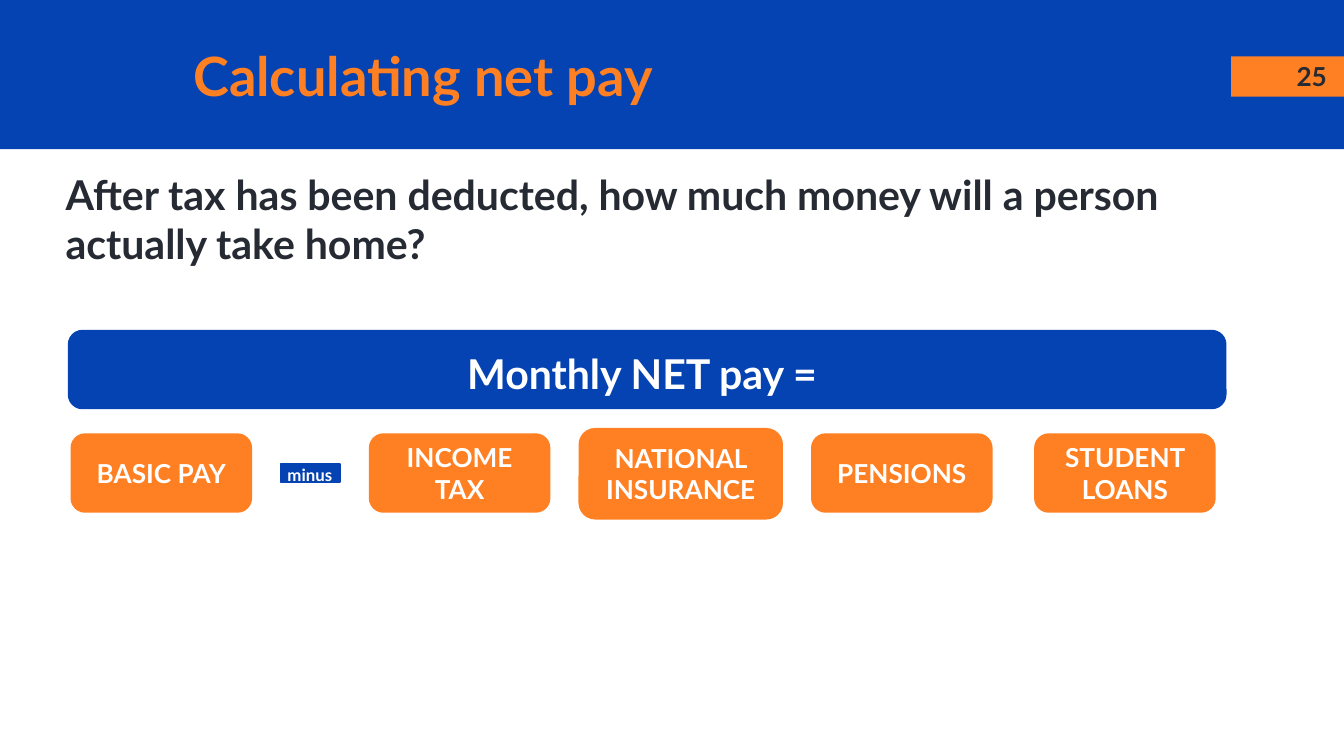
from dataclasses import dataclass

from pptx import Presentation
from pptx.dml.color import RGBColor
from pptx.enum.shapes import MSO_SHAPE
from pptx.enum.text import MSO_ANCHOR, PP_ALIGN
from pptx.util import Inches, Pt

RECT = MSO_SHAPE.RECTANGLE
ROUNDED = MSO_SHAPE.ROUNDED_RECTANGLE
MINUS = MSO_SHAPE.MATH_MINUS
TOP, MIDDLE = MSO_ANCHOR.TOP, MSO_ANCHOR.MIDDLE
LEFT, CENTER = PP_ALIGN.LEFT, PP_ALIGN.CENTER


@dataclass(frozen=True)
class Theme:
    font: str = "Lato"
    blue: str = "0543B3"
    orange: str = "FF8022"
    ink: str = "262A33"
    white: str = "FFFFFF"
    title: int = 29
    lead: int = 22
    label: int = 14
    small: int = 9


THEME = Theme()

# Content
TITLE = "Calculating net pay"
PAGE_NUMBER = "25"
QUESTION = ("After tax has been deducted, how much money will a person "
            "actually take home?")
RESULT = "Monthly NET pay = "
OPERATOR = "minus"
# Label and place: left, top, width, height
TERMS = [
    ("BASIC PAY", (0.54, 3.24, 1.32, 0.56)),
    ("INCOME TAX", (2.76, 3.24, 1.32, 0.56)),
    ("NATIONAL INSURANCE", (4.32, 3.2, 1.49, 0.65)),
    ("PENSIONS", (6.05, 3.24, 1.32, 0.56)),
    ("STUDENT LOANS", (7.71, 3.24, 1.32, 0.56)),
]


def write(shape, text, size, color, align=CENTER, anchor=MIDDLE,
          inset=0.1, spacing=None):
    frame = shape.text_frame
    frame.word_wrap = True
    frame.vertical_anchor = anchor
    frame.margin_left = frame.margin_right = Inches(0.1)
    frame.margin_top = frame.margin_bottom = Inches(inset)
    para = frame.paragraphs[0]
    para.alignment = align
    if spacing:
        para.line_spacing = spacing
    span = para.add_run()
    span.text = text
    span.font.name = THEME.font
    span.font.size = Pt(size)
    span.font.bold = True
    span.font.color.rgb = RGBColor.from_string(color)


def add_block(page, kind, place, color, line=None, adjust=None):
    shape = page.shapes.add_shape(kind, *map(Inches, place))
    shape.shadow.inherit = False
    shape.fill.solid()
    shape.fill.fore_color.rgb = RGBColor.from_string(color)
    if line:
        shape.line.color.rgb = RGBColor.from_string(color)
        shape.line.width = Pt(line)
    else:
        shape.line.fill.background()
    if adjust:
        shape.adjustments[0] = adjust
    return shape


def add_text(page, place, *args, **options):
    box = page.shapes.add_textbox(*map(Inches, place))
    write(box, *args, **options)


def add_pill(page, place, color):
    return add_block(page, ROUNDED, place, color, line=2.25, adjust=0.167)


def main():
    # Widescreen page, 16 to 9
    deck = Presentation()
    deck.slide_width = Inches(10)
    deck.slide_height = deck.slide_width * 9 // 16
    page = deck.slides.add_slide(deck.slide_layouts[6])

    # Header band and page number
    add_block(page, RECT, (0, 0, 10, 1.11), THEME.blue)
    add_block(page, RECT, (9.16, 0.42, 0.84, 0.3), THEME.orange)
    add_text(page, (1.34, 0.28, 6.38, 0.56), TITLE, THEME.title,
             THEME.orange, align=LEFT)
    add_text(page, (9.5, 0.44, 0.52, 0.25), PAGE_NUMBER, THEME.label,
             THEME.ink)

    # Question
    add_text(page, (0.39, 1.21, 9.1, 0.84), QUESTION, THEME.lead, THEME.ink,
             align=LEFT, anchor=TOP, inset=0.05)

    # Terms of the sum
    for label, place in TERMS:
        pill = add_pill(page, place, THEME.orange)
        write(pill, label, THEME.label, THEME.white)

    # Result bar
    bar = add_pill(page, (0.52, 2.47, 8.59, 0.56), THEME.blue)
    write(bar, RESULT, THEME.lead, THEME.white, spacing=1.15)

    # Minus sign with its label
    add_block(page, MINUS, (2.01, 3.24, 0.6, 0.56), THEME.blue,
              line=0.75, adjust=0.235)
    add_text(page, (1.78, 3.35, 1.05, 0.35), OPERATOR, THEME.small,
             THEME.white, anchor=TOP, spacing=1.15)

    deck.save("out.pptx")


if __name__ == "__main__":
    main()
